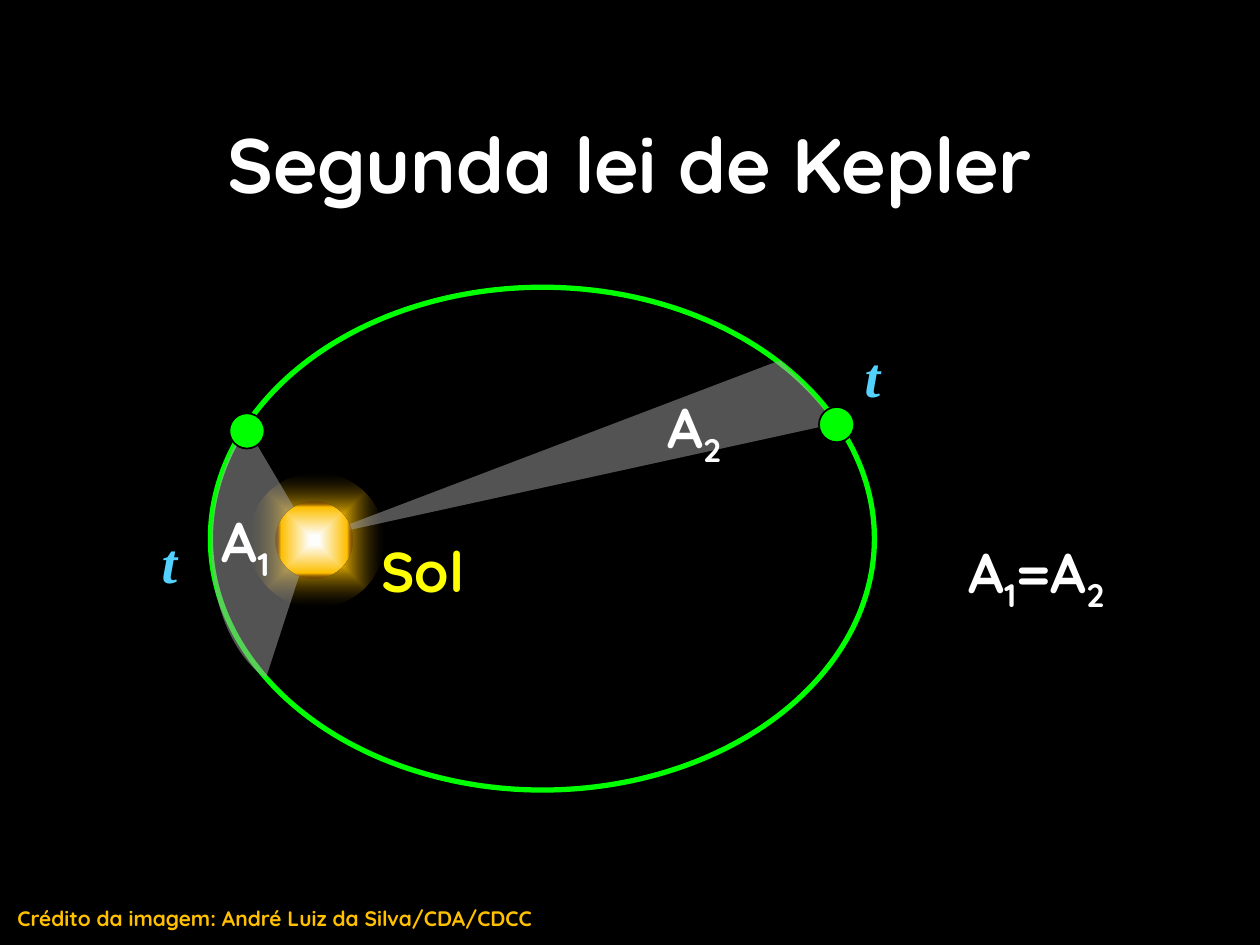
from lxml import etree
from pptx import Presentation, util as u
from pptx.dml.color import RGBColor
from pptx.enum import shapes, text
from pptx.oxml.ns import qn

W, H = 10, 7.5
COLORS = {
    "space": "000000", "white": "FFFFFF", "orbit": "00FF00", "time": "53D2FF",
    "sun": "FFFF00", "gold": "FFC000", "area": "A6A6A6", "rim": "4D0808",
}
OVAL, ARC = shapes.MSO_SHAPE.OVAL, shapes.MSO_SHAPE.ARC

# Content: text is a list of (characters, is subscript)
TITLE = [("Segunda lei de Kepler", False)]
TIME = dict(font="Times New Roman", color="time", italic=True)
LABELS = [
    ([("A", False), ("1", True), ("=A", False), ("2", True)], (7.49, 4.22, 1.47, 0.64), {}),
    ([("t", False)], (6.76, 2.66, 0.33, 0.64), TIME),
    ([("t", False)], (1.18, 4.14, 0.33, 0.64), TIME),
    ([("Sol", False)], (2.8, 4.21, 1.11, 0.64), dict(color="sun", wrap=True)),
    ([("Crédito da imagem: André Luiz da Silva/CDA/CDCC", False)], (0.04, 7.14, 5.28, 0.3),
     dict(size=12, color="gold", align="LEFT", wrap=True)),
    ([("A", False), ("2", True)], (5.16, 3.07, 0.7, 0.64), {}),
    ([("A", False), ("1", True)], (1.6, 3.97, 0.7, 0.64), {}),
]
# Gradient stops: position %, colour, opacity %
GLOW = [(7, "white", 100), (32, "gold", 100), (100, "space", 23)]
DISC = [(12, "white", 100), (85, "gold", 100), (100, "rim", 17)]
# Swept areas: box, rotation, mirrored, start and end of the arc
AREAS = [
    ((1.68, 3.04, 1.59, 2.45), 3.7, True, (182.579, 45.398)),
    ((-2.08, 1.44, 9.13, 5.66), 6, False, (199.904, 204.989)),
]
PLANETS, PLANET_SIZE = [(1.82, 3.28), (6.5, 3.23)], 0.28


def rgb(name):
    return RGBColor.from_string(COLORS[name])


def inches(box):
    return [u.Inches(v) for v in box]


def write(tf, parts, size=32, font="Quicksand", color="white", italic=False,
          align="CENTER", wrap=False):
    tf.word_wrap = wrap
    p = tf.paragraphs[0]
    p.alignment = getattr(text.PP_ALIGN, align)
    for chars, subscript in parts:
        r = p.add_run()
        r.text = chars
        f = r.font
        f.size, f.name, f.bold, f.italic = u.Pt(size), font, True, italic
        f.color.rgb = rgb(color)
        if subscript:
            r._r.get_or_add_rPr().set("baseline", "-25000")


def add_color(parent, color, opacity):
    clr = etree.SubElement(parent, qn("a:srgbClr"), val=COLORS[color])
    if opacity < 100:
        etree.SubElement(clr, qn("a:alpha"), val=str(opacity * 1000))


def add_shape(kind, box, fill=None, line=None, width=1):
    sp = slide.shapes.add_shape(kind, *inches(box))
    sp.shadow.inherit = False
    if fill:
        sp.fill.solid()
        sp.fill.fore_color.rgb = rgb(fill)
    else:
        sp.fill.background()
    if line:
        sp.line.color.rgb = rgb(line)
        sp.line.width = u.Pt(width)
    else:
        sp.line.fill.background()
    return sp


def add_glow(box, stops):
    sp = add_shape(OVAL, box)
    old = sp._element.spPr.find(qn("a:noFill"))
    grad = etree.Element(qn("a:gradFill"), rotWithShape="1")
    gs_list = etree.SubElement(grad, qn("a:gsLst"))
    for pos, color, opacity in stops:
        add_color(etree.SubElement(gs_list, qn("a:gs"), pos=str(pos * 1000)), color, opacity)
    shade = etree.SubElement(grad, qn("a:path"), path="shape")
    etree.SubElement(shade, qn("a:fillToRect"), dict.fromkeys("ltrb", "50000"))
    old.getparent().replace(old, grad)


prs = Presentation()
prs.slide_width, prs.slide_height = u.Inches(W), u.Inches(H)
slide = prs.slides.add_slide(prs.slide_layouts[5])
slide.background.fill.solid()
slide.background.fill.fore_color.rgb = rgb("space")

# Title
title = slide.shapes.title
title.left, title.top, title.width, title.height = inches((0.75, 0.67, 8.5, 1.25))
title.text_frame.vertical_anchor = text.MSO_ANCHOR.MIDDLE
write(title.text_frame, TITLE, size=44, wrap=True)

# Halo and orbit
add_glow((1.97, 3.75, 1.08, 1.07), GLOW)
add_shape(OVAL, (1.67, 2.28, 5.27, 3.99), line="orbit", width=3)

# Swept areas
for box, rotation, mirrored, ends in AREAS:
    sp = add_shape(ARC, box, fill="area")
    sp.adjustments[0], sp.adjustments[1] = ends
    sp.rotation = rotation
    if mirrored:
        sp._element.spPr.xfrm.set("flipH", "1")
    clr = sp._element.spPr.find(qn("a:solidFill"))[0]
    etree.SubElement(clr, qn("a:alpha"), val="50000")

# Sun and planets
add_glow((2.19, 3.98, 0.61, 0.61), DISC)
for x, y in PLANETS:
    add_shape(OVAL, (x, y, PLANET_SIZE, PLANET_SIZE), fill="orbit", line="space")

# Labels
for parts, box, style in LABELS:
    write(slide.shapes.add_textbox(*inches(box)).text_frame, parts, **style)

prs.save("out.pptx")
